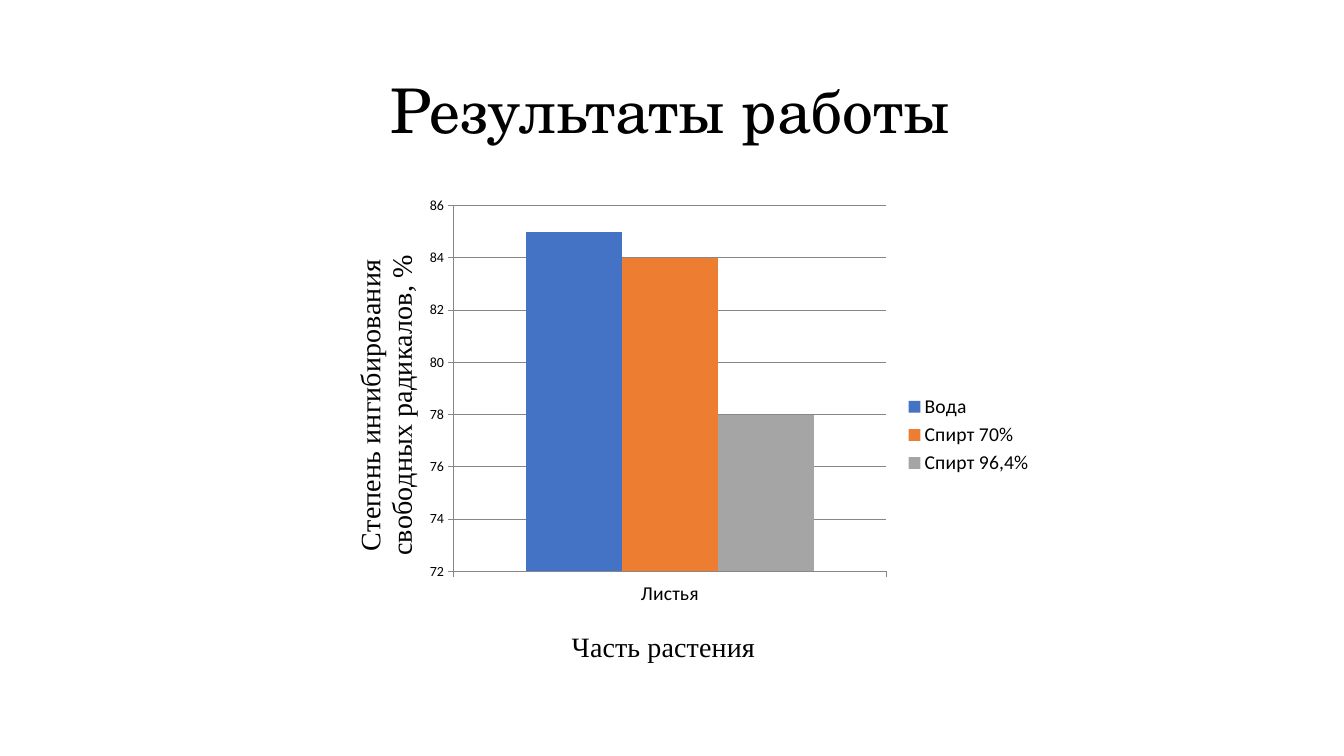
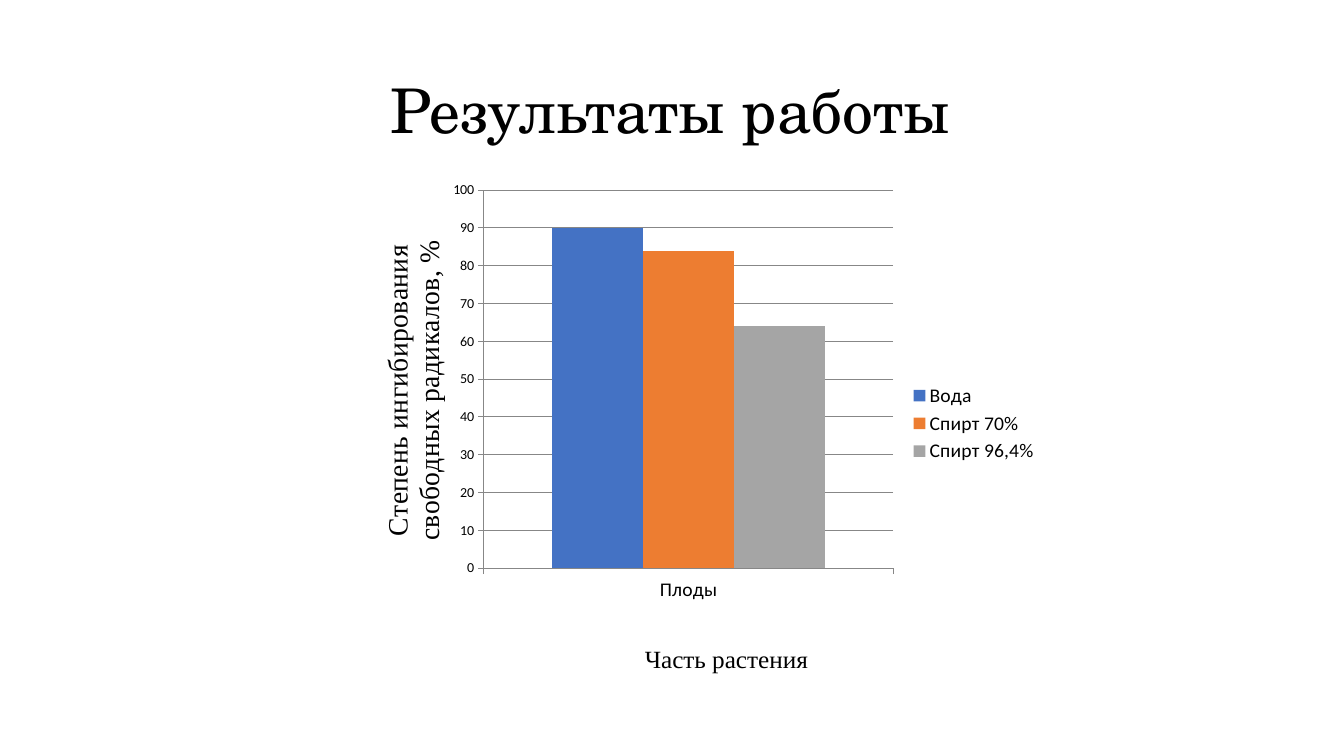
from dataclasses import dataclass

from lxml import etree
from pptx import Presentation
from pptx.chart.data import CategoryChartData
from pptx.dml.color import RGBColor
from pptx.enum.chart import XL_CHART_TYPE, XL_LEGEND_POSITION, XL_TICK_MARK
from pptx.enum.text import MSO_ANCHOR, PP_ALIGN
from pptx.oxml.ns import qn
from pptx.util import Inches, Pt

CLUSTERED = XL_CHART_TYPE.COLUMN_CLUSTERED
LEGEND_RIGHT = XL_LEGEND_POSITION.RIGHT
TICK_OUTSIDE = XL_TICK_MARK.OUTSIDE
MIDDLE = MSO_ANCHOR.MIDDLE
CENTER = PP_ALIGN.CENTER


@dataclass(frozen=True)
class Theme:
    text: str = "000000"
    line: str = "878787"
    series: tuple = ("4472C4", "ED7D31", "A5A5A5")
    title_font: str = "TeX Gyre Schola"
    axis_font: str = "Times New Roman"
    chart_font: str = "Calibri"
    title_size: int = 44
    axis_size: int = 20
    label_size: int = 14
    tick_size: int = 10
    line_width: float = 0.75


THEME = Theme()
TITLE = "Результаты работы"
TITLE_BOX = (0.9, 0.4, 11.5, 1.45)
CATEGORY_TITLE = "Часть растения"
VALUE_TITLE = "Степень ингибирования свободных радикалов, %"
SOLVENTS = ("Вода", "Спирт 70%", "Спирт 96,4%")

# Frames and positions are in inches on the slide; scale is minimum, maximum, step.
RESULTS = (
    {
        "category": "Листья",
        "values": (85, 84, 78),
        "scale": (72, 86, 2),
        "frame": (3.16, 1.87, 7.19, 4.89),
        "plot": (4.5, 2.04, 4.29, 3.63),
        "category_title_at": (5.62, 6.19),
        "category_title_size": 20,
        "value_title_at": (3.44, 2.48),
    },
    {
        "category": "Плоды",
        "values": (90, 84, 64),
        "scale": (0, 100, 10),
        "frame": (3.46, 1.72, 6.94, 5.04),
        "plot": (4.8, 1.89, 4.06, 3.81),
        "category_title_at": (6.35, 6.42),
        "category_title_size": 18,
        "value_title_at": (3.71, 2.39),
    },
)


def style_font(font, name, size):
    formats = {"name": name, "size": Pt(size), "bold": False}
    for attribute, value in formats.items():
        setattr(font, attribute, value)
    font.color.rgb = RGBColor.from_string(THEME.text)


def style_line(line):
    line.color.rgb = RGBColor.from_string(THEME.line)
    line.width = Pt(THEME.line_width)


def place(parent, index, frame, position):
    """Fix a chart part at a slide position, as fractions of the chart frame."""
    for old_layout in parent.findall(qn("c:layout")):
        parent.remove(old_layout)
    layout = etree.Element(qn("c:layout"))
    manual = etree.SubElement(layout, qn("c:manualLayout"))
    left, top, width, height = frame
    settings = {
        "xMode": "edge",
        "yMode": "edge",
        "x": (position[0] - left) / width,
        "y": (position[1] - top) / height,
    }
    if len(position) == 4:
        settings = {"layoutTarget": "inner", **settings,
                    "w": position[2] / width, "h": position[3] / height}
    for name, value in settings.items():
        text = value if isinstance(value, str) else f"{value:.4f}"
        etree.SubElement(manual, qn(f"c:{name}")).set("val", text)
    parent.insert(index, layout)


def add_title(page):
    box = page.shapes.add_textbox(*map(Inches, TITLE_BOX))
    frame = box.text_frame
    frame.word_wrap = True
    frame.vertical_anchor = MIDDLE
    para = frame.paragraphs[0]
    para.alignment = CENTER
    para.line_spacing = 0.9
    span = para.add_run()
    span.text = TITLE
    style_font(span.font, THEME.title_font, THEME.title_size)


def add_axis_title(axis, text, size, frame, position):
    title = axis.axis_title
    para = title.text_frame.paragraphs[0]
    span = para.add_run()
    span.text = text
    style_font(span.font, THEME.axis_font, size)
    place(title.element, 1, frame, position)
    return title


def style_axis(axis, label_size):
    axis.major_tick_mark = TICK_OUTSIDE
    style_font(axis.tick_labels.font, THEME.chart_font, label_size)
    style_line(axis.format.line)


def add_legend(chart):
    chart.has_legend = True
    chart.legend.position = LEGEND_RIGHT
    chart.legend.include_in_layout = False
    style_font(chart.legend.font, THEME.chart_font, THEME.label_size)


def add_result_chart(page, result):
    data = CategoryChartData()
    data.categories = [result["category"]]
    for solvent, value in zip(SOLVENTS, result["values"]):
        data.add_series(solvent, [value])
    frame = result["frame"]
    chart = page.shapes.add_chart(CLUSTERED, *map(Inches, frame), data).chart
    chart.has_title = False
    style_font(chart.font, THEME.chart_font, THEME.tick_size)
    add_legend(chart)

    plot = chart.plots[0]
    plot.gap_width = 150
    plot.vary_by_categories = False
    for series, color in zip(plot.series, THEME.series):
        series.format.fill.solid()
        series.format.fill.fore_color.rgb = RGBColor.from_string(color)

    style_axis(chart.category_axis, THEME.label_size)
    add_axis_title(chart.category_axis, CATEGORY_TITLE,
                   result["category_title_size"], frame,
                   result["category_title_at"])

    value_axis = chart.value_axis
    style_axis(value_axis, THEME.tick_size)
    scale_names = ("minimum_scale", "maximum_scale", "major_unit")
    for attribute, value in zip(scale_names, result["scale"]):
        setattr(value_axis, attribute, value)
    value_axis.has_major_gridlines = True
    style_line(value_axis.major_gridlines.format.line)
    title = add_axis_title(value_axis, VALUE_TITLE, THEME.axis_size, frame,
                           result["value_title_at"])
    body = title.element.find(f".//{qn('a:bodyPr')}")
    body.set("rot", "-5400000")
    body.set("vert", "horz")

    place(chart.element.find(f".//{qn('c:plotArea')}"), 0, frame, result["plot"])


def main():
    deck = Presentation()
    deck.slide_width = Inches(13.33)
    deck.slide_height = Inches(7.5)
    for result in RESULTS:
        page = deck.slides.add_slide(deck.slide_layouts[6])
        add_title(page)
        add_result_chart(page, result)
    deck.save("out.pptx")


if __name__ == "__main__":
    main()
